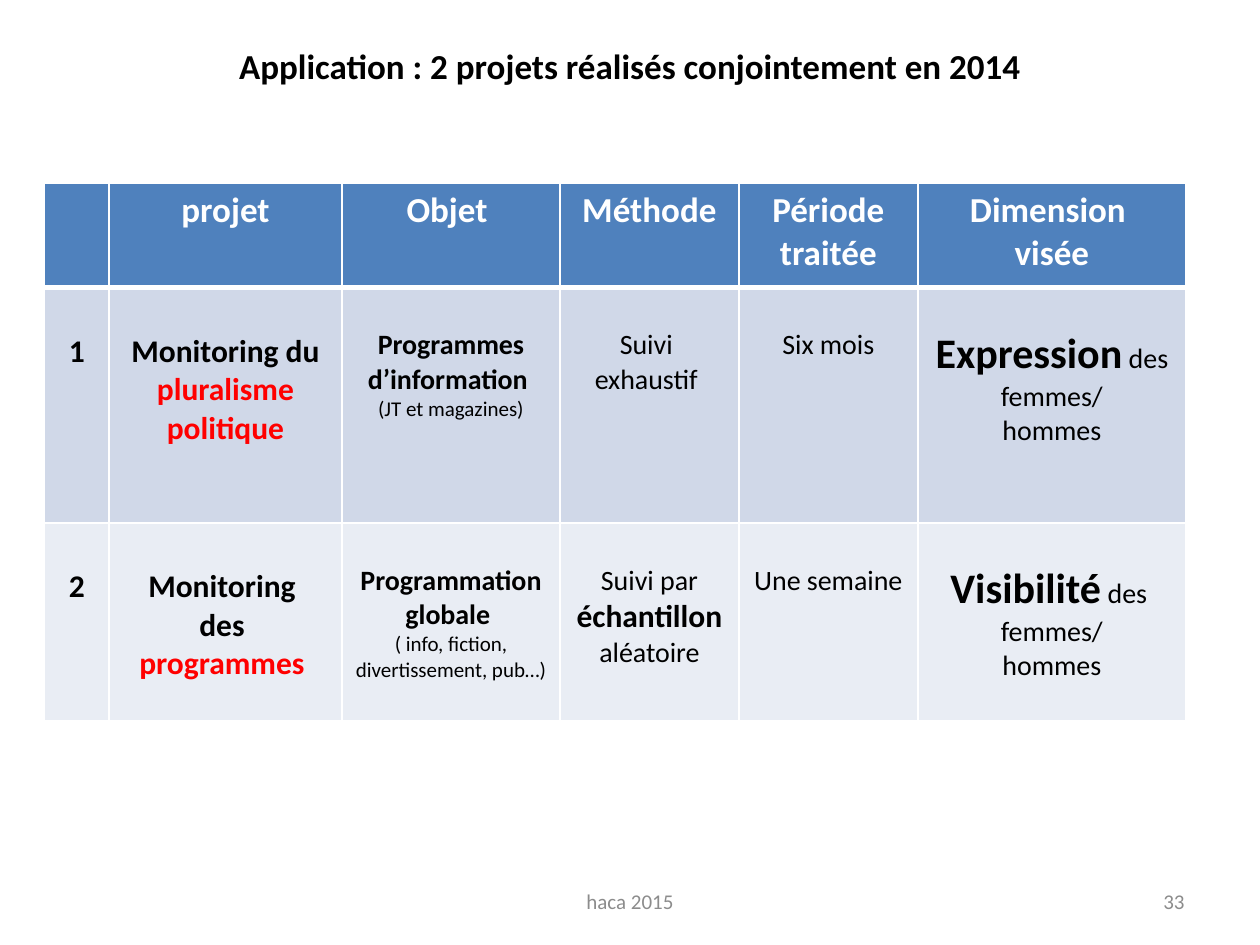
import pptx
import pptx.util
import pptx.dml.color
import pptx.enum.text
import pptx.oxml.ns
import lxml.etree

Pt = pptx.util.Pt
ALIGN = pptx.enum.text.PP_ALIGN
ANCHOR = pptx.enum.text.MSO_ANCHOR

THEME = {
    "font": "Calibri",
    "black": "000000", "white": "FFFFFF", "red": "FF0000", "grey": "8C8C8C",
    "fills": ["4F81BD", "D0D8E8", "E9EDF4"],
    "heading": 20, "key": 24, "strong": 18, "body": 16, "small": 12,
}

TITLE = "Application : 2 projets réalisés conjointement en 2014"
HEADINGS = ["", "projet", "Objet ", "Méthode", "Période traitée", "Dimension \nvisée"]

NUMBER = {"size": "strong", "bold": True}
RED = {"size": "strong", "bold": True, "color": "red"}
SUBJECT = {"size": "body", "bold": True}
DETAIL = {"size": "small"}
KEY = {"size": "key", "bold": True}
BODY = {"size": "body"}

PROJECTS = [
    [
        [[("1", NUMBER)]],
        [[("Monitoring du ", NUMBER), ("pluralisme politique", RED)]],
        [[("Programmes d’information ", SUBJECT)], [("(JT et magazines)", DETAIL)]],
        [[("Suivi ", BODY)], [("exhaustif ", BODY)]],
        [[("Six mois", BODY)]],
        [[("Expression", KEY), (" des femmes/", BODY)], [("hommes", BODY)]],
    ],
    [
        [[("2", NUMBER)]],
        [[("Monitoring ", NUMBER)], [("des ", NUMBER)], [("programmes ", RED)]],
        [[("Programmation globale ", SUBJECT)],
         [("( info, fiction, divertissement, pub…)", DETAIL)]],
        [[("Suivi par ", BODY), ("échantillon", NUMBER), (" aléatoire", BODY)]],
        [[("Une semaine", BODY)]],
        [[("Visibilité", KEY), (" des ", BODY)], [("femmes/", BODY)], [("hommes", BODY)]],
    ],
]

FOOTERS = [
    ("haca 2015", (246, 500.5, 228, 28.75), ALIGN.CENTER),
    ("33", (516, 500.5, 168, 28.75), ALIGN.RIGHT),
]

TABLE_LEFT, TABLE_TOP = 25.5, 104.75
COLUMN_WIDTHS = [36.75, 133.25, 124.5, 102.25, 102.25, 153.25]
ROW_HEIGHTS = [59.75, 134.5, 113]
CELL_MARGIN = 3.6
LINE_SPACING = 1.22
THIN, THICK = 1, 3


def rgb(value):
    return pptx.dml.color.RGBColor.from_string(value)


def add_text(para, text, size="body", bold=False, color="black", align=ALIGN.CENTER):
    para.alignment = align
    span = para.add_run()
    span.text = text
    span.font.name = THEME["font"]
    span.font.size = Pt(THEME[size])
    span.font.bold = bold
    span.font.color.rgb = rgb(THEME[color])


def set_borders(cell, top, bottom):
    properties = cell._tc.get_or_add_tcPr()
    sides = [("lnL", THIN), ("lnR", THIN), ("lnT", top), ("lnB", bottom)]
    for position, (side, width) in enumerate(sides):
        line = lxml.etree.Element(pptx.oxml.ns.qn("a:" + side), w=str(Pt(width)))
        fill = lxml.etree.SubElement(line, pptx.oxml.ns.qn("a:solidFill"))
        lxml.etree.SubElement(fill, pptx.oxml.ns.qn("a:srgbClr"), val=THEME["white"])
        properties.insert(position, line)


def fill_cell(cell, paragraphs):
    for index, spans in enumerate(paragraphs):
        frame = cell.text_frame
        para = frame.paragraphs[0] if index == 0 else frame.add_paragraph()
        for text, style in spans:
            add_text(para, text, **style)


def add_project_table(page):
    heading = {"size": "heading", "bold": True, "color": "white"}
    header = [[[(line, heading)] for line in text.split("\n") if line] for text in HEADINGS]
    rows = [header] + PROJECTS
    table = page.shapes.add_table(
        len(rows), len(HEADINGS), Pt(TABLE_LEFT), Pt(TABLE_TOP),
        Pt(sum(COLUMN_WIDTHS)), Pt(sum(ROW_HEIGHTS))).table
    for column, width in zip(table.columns, COLUMN_WIDTHS):
        column.width = Pt(width)
    for row_index, (row, height) in enumerate(zip(rows, ROW_HEIGHTS)):
        table.rows[row_index].height = Pt(height)
        for column_index, paragraphs in enumerate(row):
            cell = table.cell(row_index, column_index)
            cell.fill.solid()
            cell.fill.fore_color.rgb = rgb(THEME["fills"][row_index])
            set_borders(cell, THICK if row_index == 1 else THIN,
                        THICK if row_index == 0 else THIN)
            if row_index > 0:
                lead = THEME["strong"] if column_index < 2 else THEME["body"]
                cell.margin_top = Pt(round(CELL_MARGIN + lead * LINE_SPACING, 2))
            fill_cell(cell, paragraphs)


def add_footer(page, text, place, align):
    box = page.shapes.add_textbox(*[Pt(value) for value in place])
    box.text_frame.word_wrap = True
    box.text_frame.vertical_anchor = ANCHOR.MIDDLE
    add_text(box.text_frame.paragraphs[0], text, size="small", color="grey", align=align)


def main():
    deck = pptx.Presentation()
    deck.slide_width, deck.slide_height = Pt(720), Pt(540)
    page = deck.slides.add_slide(deck.slide_layouts[5])
    title = page.shapes.title
    title.left, title.top, title.width, title.height = Pt(36), Pt(21.6), Pt(648), Pt(90)
    title.text_frame.vertical_anchor = ANCHOR.TOP
    add_text(title.text_frame.paragraphs[0], TITLE, size="heading", bold=True)
    add_project_table(page)
    for text, place, align in FOOTERS:
        add_footer(page, text, place, align)
    deck.save("out.pptx")


if __name__ == "__main__":
    main()
